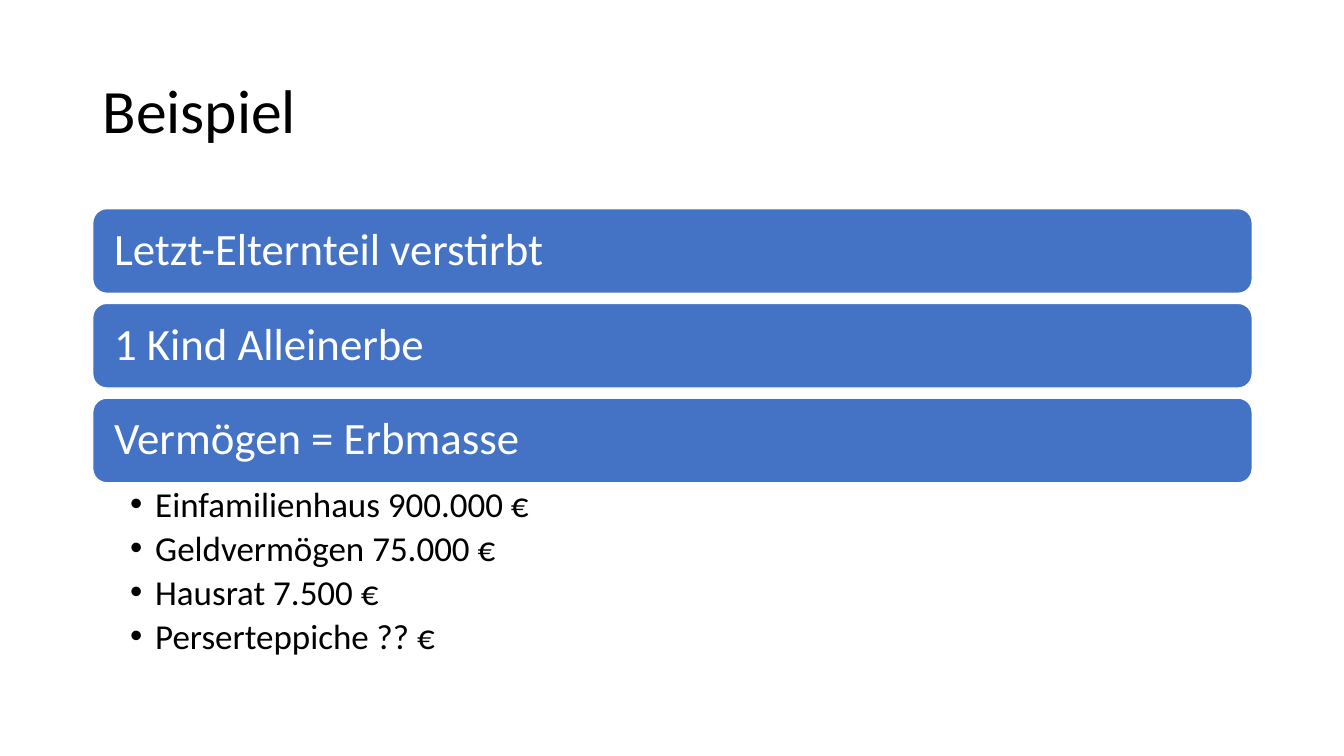
from lxml import etree
from pptx import Presentation
from pptx.dml.color import RGBColor
from pptx.enum.shapes import MSO_SHAPE as Shape
from pptx.enum.text import MSO_ANCHOR as Anchor, PP_ALIGN as Align
from pptx.oxml.ns import qn
from pptx.util import Pt

PX = 9144  # EMU per px, 100 px to the inch
COLORS = {"text": "000000", "bar": "4472C4", "white": "FFFFFF"}


class SlideBuilder:
    font = "Calibri"
    line_spacing = 0.9

    def __init__(self, slide):
        self.slide = slide

    def color(self, name):
        return RGBColor.from_string(COLORS[name])

    def box(self, left, top, width, height):
        return [n * PX for n in (left, top, width, height)]

    def frame(self, shape, anchor, insets):
        frame = shape.text_frame
        frame.word_wrap = True
        frame.vertical_anchor = anchor
        (frame.margin_left, frame.margin_top,
         frame.margin_right, frame.margin_bottom) = self.box(*insets)
        return frame

    def style(self, paragraph, size, color):
        paragraph.alignment = Align.LEFT
        paragraph.line_spacing = self.line_spacing
        for run in paragraph.runs:
            run.font.name = self.font
            run.font.size = Pt(size)
            run.font.color.rgb = self.color(color)

    def title(self, text, *place):
        heading = self.slide.shapes.add_textbox(*self.box(*place))
        frame = self.frame(heading, Anchor.MIDDLE, (10, 5, 10, 5))
        frame.text = text
        self.style(frame.paragraphs[0], 44, "text")

    def bar(self, text, *place):
        bar = self.slide.shapes.add_shape(Shape.ROUNDED_RECTANGLE, *self.box(*place))
        bar.shadow.inherit = False
        bar.fill.solid()
        bar.fill.fore_color.rgb = self.color("bar")
        bar.line.color.rgb = self.color("white")
        bar.line.width = Pt(1)
        frame = self.frame(bar, Anchor.MIDDLE, (17, 13, 17, 13))
        frame.text = text
        self.style(frame.paragraphs[0], 32, "white")

    def bullets(self, items, *place):
        bullet_list = self.slide.shapes.add_textbox(*self.box(*place))
        frame = self.frame(bullet_list, Anchor.TOP, (37, 4, 25, 4))
        frame.text = "\n".join(items)
        for paragraph in frame.paragraphs:
            props = paragraph._p.get_or_add_pPr()
            props.set("marL", str(25 * PX))
            props.set("indent", str(-25 * PX))
            etree.SubElement(props, qn("a:buFont")).set("typeface", "Arial")
            etree.SubElement(props, qn("a:buChar")).set("char", "•")
            paragraph.space_after = Pt(4.5)
            self.style(paragraph, 25, "text")


def main():
    deck = Presentation()
    deck.slide_width, deck.slide_height = 1333 * PX, 750 * PX
    builder = SlideBuilder(deck.slides.add_slide(deck.slide_layouts[6]))
    left, width = 92, 1150

    # Title
    builder.title("Beispiel", left, 40, width, 145)

    # Stacked bars
    first_top, pitch, height = 207, 94, 84
    facts = ["Letzt-Elternteil verstirbt", "1 Kind Alleinerbe", "Vermögen = Erbmasse"]
    for row, fact in enumerate(facts):
        builder.bar(fact, left, first_top + row * pitch, width, height)

    # Assets of the estate
    assets = ["Einfamilienhaus 900.000 €", "Geldvermögen 75.000 €",
              "Hausrat 7.500 €", "Perserteppiche ?? €"]
    builder.bullets(assets, left, 479, width, 188)

    deck.save("out.pptx")


if __name__ == "__main__":
    main()
